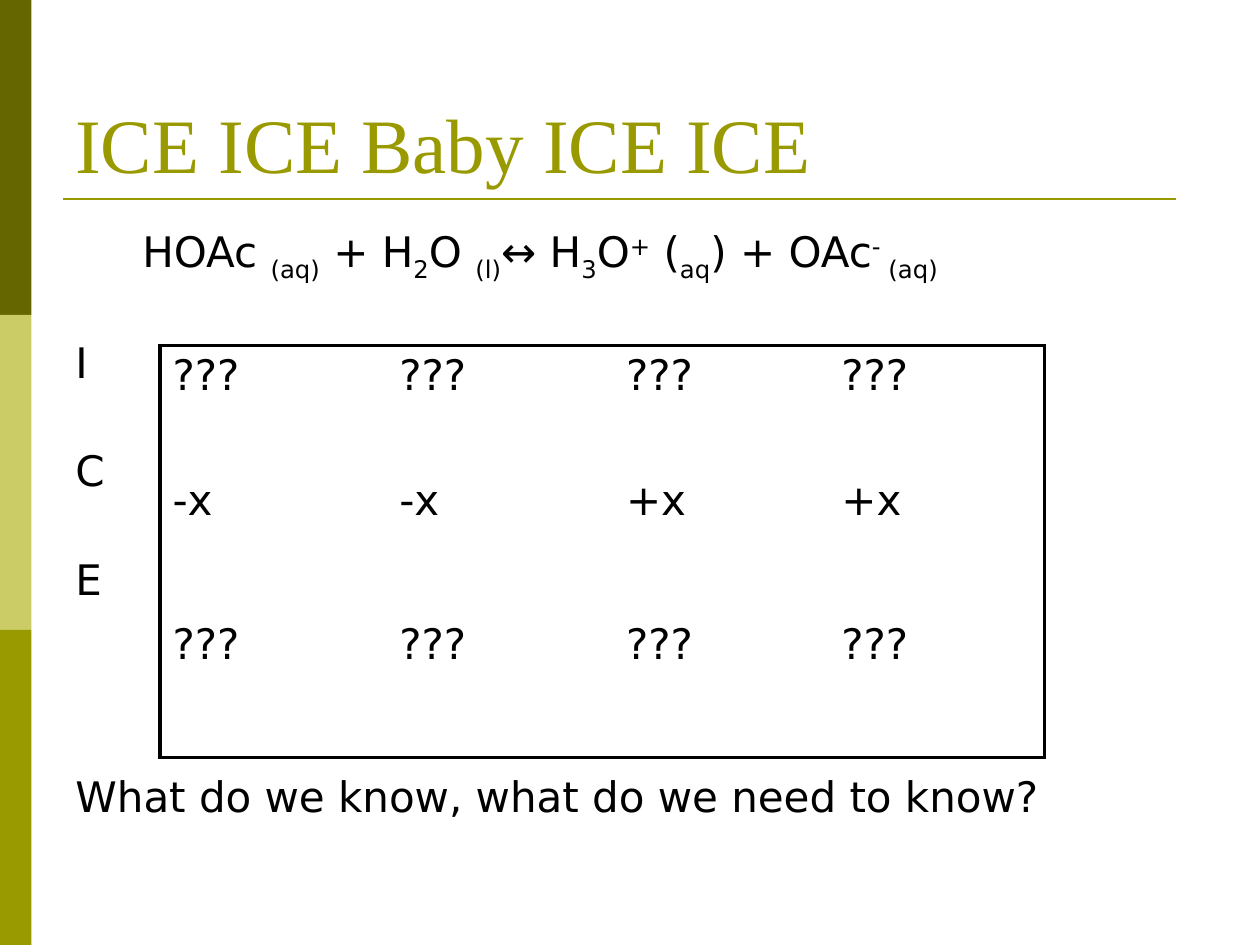
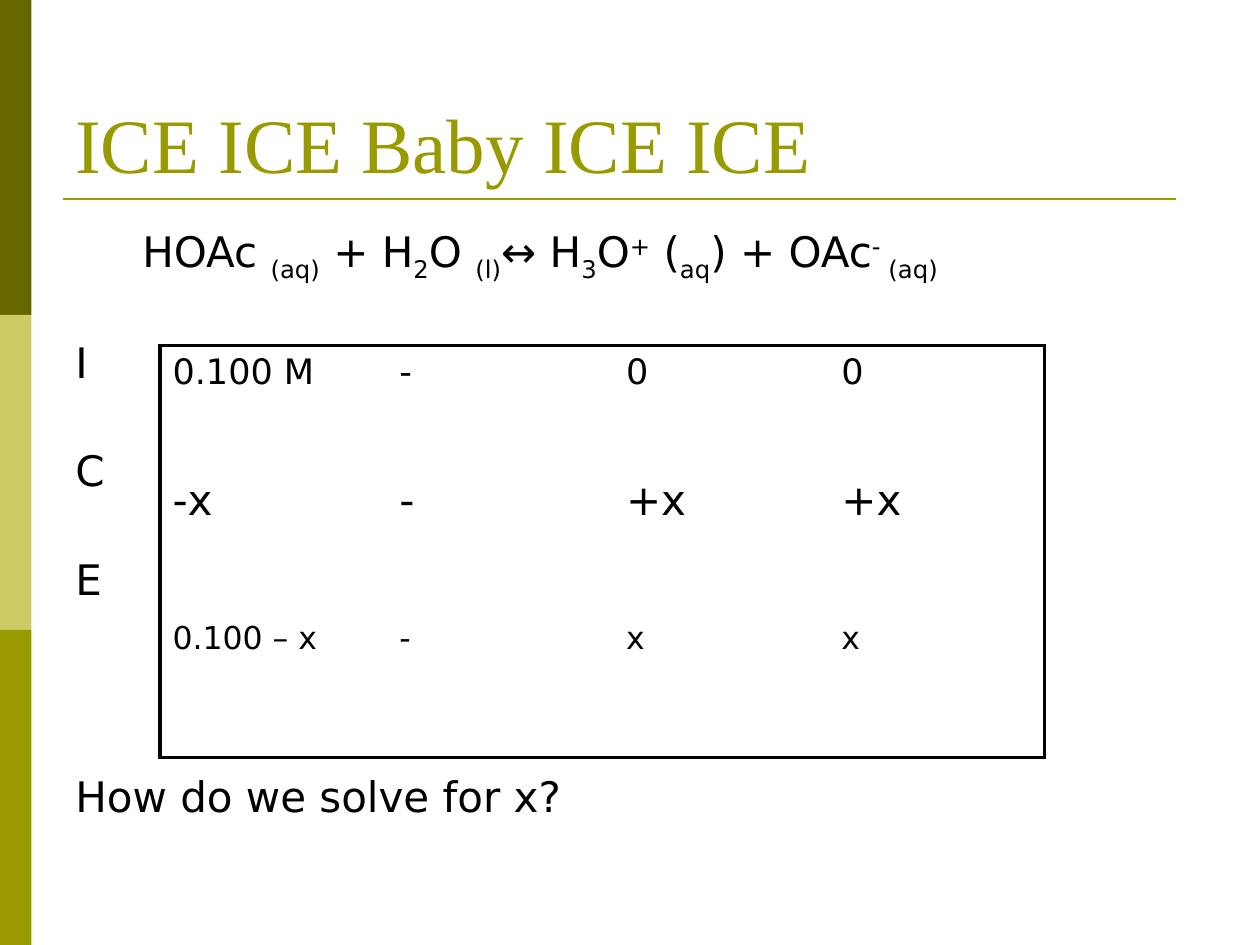
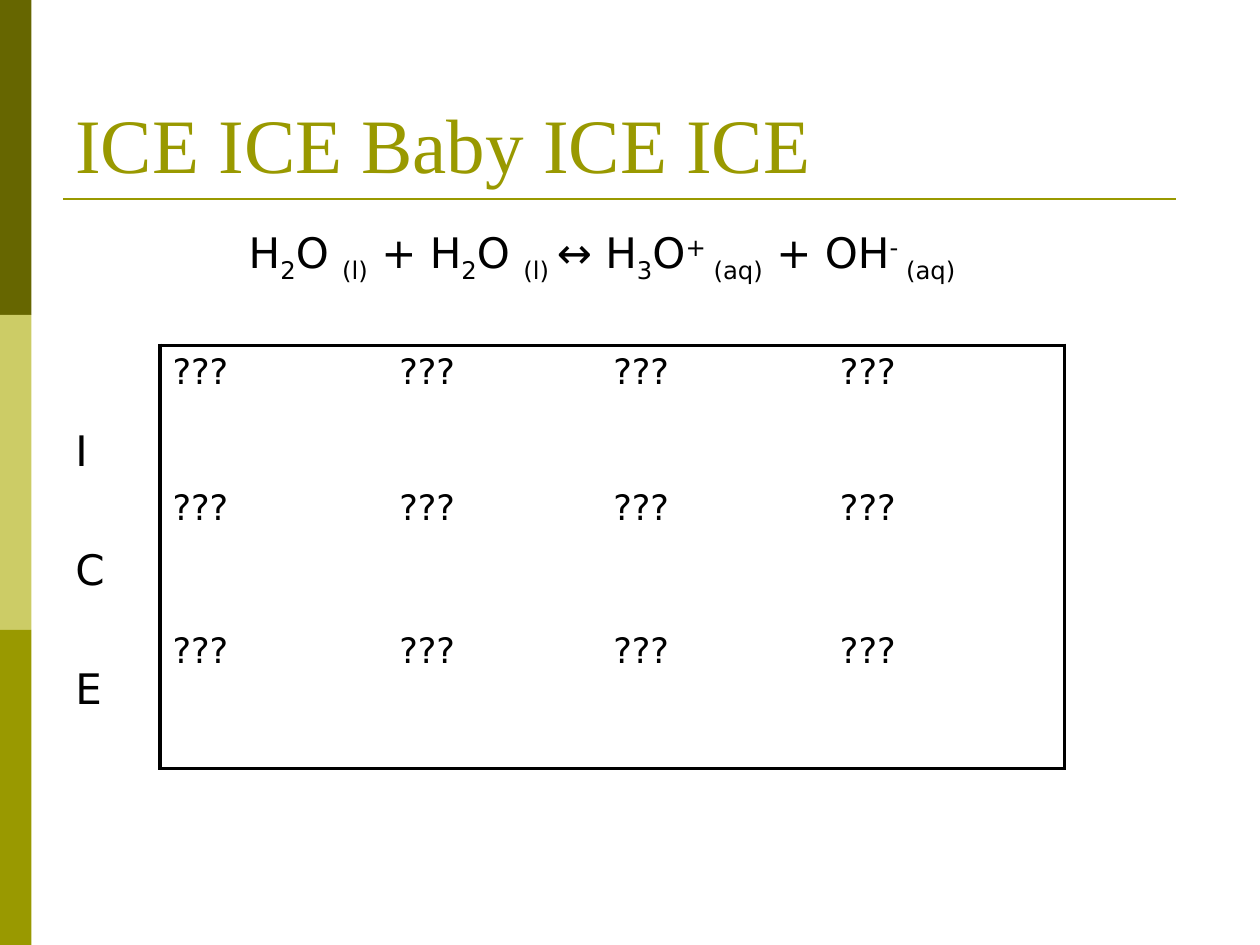
from dataclasses import dataclass

from lxml import etree
from pptx import Presentation
from pptx.dml.color import RGBColor
from pptx.enum import shapes, text
from pptx.oxml import ns
from pptx.util import Pt


# Theme
@dataclass(frozen=True)
class Theme:
    dark: str = "666600"
    light: str = "CCCC66"
    olive: str = "999900"
    ink: str = "000000"
    title_font: str = "Times New Roman"
    body_font: str = "DejaVu Sans"
    title_size: float = 44
    body_size: float = 24
    rule_width: float = 1.5
    border_width: float = 2.25


THEME = Theme()
WIDTH, HEIGHT = 720, 540
BAND_WIDTH = 18
TITLE = "ICE ICE Baby ICE ICE"
OFFSETS = {"_": "-25000", "^": "30000"}


# Content: runs starting with _ are subscripts, with ^ superscripts
@dataclass(frozen=True)
class Line:
    runs: tuple[str, ...]
    space_before: float
    indent: float = 0


@dataclass(frozen=True)
class Grid:
    columns: tuple[float, ...]
    rows: tuple[float, ...]
    values: tuple[tuple[str, ...], ...]
    sizes: tuple[float, ...]


@dataclass(frozen=True)
class IceSlide:
    lines: tuple[Line, ...]
    spacing: float
    grid: Grid


def ice_lines(equation: Line, first_gap: float, gap: float) -> tuple[Line, ...]:
    return (equation, Line(("I",), first_gap), Line(("C",), gap), Line(("E",), gap))


ACID_LINES = ice_lines(
    Line(("HOAc ", "_(aq)", " + H", "_2", "O ", "_(l)", "↔ H", "_3", "O", "^+",
          " (", "_aq", ") + OAc", "^- ", "_(aq)"), 5.6, 38.2), 36.3, 36.3)
WATER_LINES = ice_lines(
    Line(("H", "_2", "O ", "_(l)", " + H", "_2", "O ", "_(l) ", "↔ H", "_3", "O", "^+",
          "_ (aq)", " + OH", "^- ", "_(aq)"), 5.6, 99), 80, 39.2)
ACID_COLUMNS = (110.9, 18.7, 105.1, 24.5, 102.2, 20.9, 123.1)
WATER_COLUMNS = (110.9, 18.7, 105.1, 16.6, 112.3, 16.6, 135.4)
ACID_ROWS = (71.3, 82.1, 82.1)
WATER_ROWS = (77.8, 82.1, 82.1)
UNKNOWN = ("???",) * 4

SLIDES = (
    IceSlide(ACID_LINES + (Line(("What do we know, what do we need to know?",), 97.8),), 0.9,
             Grid(ACID_COLUMNS, ACID_ROWS,
                  (UNKNOWN, ("-x", "-x", "+x", "+x"), UNKNOWN), (24, 24, 24))),
    IceSlide(ACID_LINES + (Line(("How do we solve for x?",), 97.8),), 0.9,
             Grid(ACID_COLUMNS, ACID_ROWS,
                  (("0.100 M", "-", "0", "0"), ("-x", "-", "+x", "+x"),
                   ("0.100 – x", "-", "x", "x")), (20, 24, 18))),
    IceSlide(WATER_LINES, 1.0,
             Grid(WATER_COLUMNS, WATER_ROWS, (UNKNOWN,) * 3, (20, 20, 20))),
)


# Drawing
def style(font, name: str, size: float, color: str) -> None:
    font.name = name
    font.size = Pt(size)
    font.color.rgb = RGBColor.from_string(color)


def add_text_frame(slide, left: float, top: float, width: float, height: float):
    frame = slide.shapes.add_textbox(Pt(left), Pt(top), Pt(width), Pt(height)).text_frame
    frame.word_wrap = True
    return frame


def draw_frame(slide) -> None:
    """Side bands, title rule and title shared by all slides."""
    band_height = HEIGHT / 3
    for index, color in enumerate((THEME.dark, THEME.light, THEME.olive)):
        band = slide.shapes.add_shape(shapes.MSO_SHAPE.RECTANGLE, 0, Pt(index * band_height),
                                      Pt(BAND_WIDTH), Pt(band_height))
        band.shadow.inherit = False
        band.fill.solid()
        band.fill.fore_color.rgb = RGBColor.from_string(color)
        band.line.fill.background()

    rule = slide.shapes.add_connector(shapes.MSO_CONNECTOR.STRAIGHT,
                                      Pt(36), Pt(113.8), Pt(671.8), Pt(113.8))
    rule.line.color.rgb = RGBColor.from_string(THEME.olive)
    rule.line.width = Pt(THEME.rule_width)
    etree.SubElement(rule._element.spPr, ns.qn("a:effectLst"))

    title = add_text_frame(slide, 36, 21.6, 648, 90)
    title.vertical_anchor = text.MSO_ANCHOR.BOTTOM
    title.text = TITLE
    style(title.paragraphs[0].runs[0].font, THEME.title_font, THEME.title_size, THEME.olive)


def draw_lines(slide, lines: tuple[Line, ...], spacing: float) -> None:
    """Equation, row letters and question."""
    body = add_text_frame(slide, 36, 126, 622.8, 356.4)
    for index, line in enumerate(lines):
        paragraph = body.add_paragraph() if index else body.paragraphs[0]
        paragraph.line_spacing = spacing
        paragraph.space_before = Pt(line.space_before)
        paragraph._p.get_or_add_pPr().set("marL", str(Pt(line.indent)))
        for part in line.runs:
            run = paragraph.add_run()
            run.text = part.lstrip("_^")
            style(run.font, THEME.body_font, THEME.body_size, THEME.ink)
            if part[0] in OFFSETS:
                run.font._element.set("baseline", OFFSETS[part[0]])


def set_borders(cell, visible: dict[str, bool]) -> None:
    properties = cell._tc.get_or_add_tcPr()
    for position, (side, shown) in enumerate(visible.items()):
        border = etree.Element(ns.qn(f"a:{side}"), w=str(Pt(THEME.border_width)))
        if shown:
            fill = etree.SubElement(border, ns.qn("a:solidFill"))
            etree.SubElement(fill, ns.qn("a:srgbClr"), val=THEME.ink)
        else:
            etree.SubElement(border, ns.qn("a:noFill"))
        properties.insert(position, border)


def draw_grid(slide, grid: Grid) -> None:
    """ICE table: values in every other column, border around the outside."""
    row_count, column_count = len(grid.rows), len(grid.columns)
    table = slide.shapes.add_table(row_count, column_count, Pt(91.4), Pt(197.3),
                                   Pt(sum(grid.columns)), Pt(sum(grid.rows))).table
    table.first_row = table.horz_banding = False
    for column, width in zip(table.columns, grid.columns):
        column.width = Pt(width)
    for r, height in enumerate(grid.rows):
        table.rows[r].height = Pt(height)
        for c in range(column_count):
            cell = table.cell(r, c)
            cell.fill.background()
            set_borders(cell, {"lnL": c == 0, "lnR": c == column_count - 1,
                               "lnT": r == 0, "lnB": r == row_count - 1})
            if c % 2 == 0:
                cell.text_frame.text = grid.values[r][c // 2]
                style(cell.text_frame.paragraphs[0].runs[0].font,
                      THEME.body_font, grid.sizes[r], THEME.ink)


def main() -> None:
    deck = Presentation()
    deck.slide_width, deck.slide_height = Pt(WIDTH), Pt(HEIGHT)
    for content in SLIDES:
        slide = deck.slides.add_slide(deck.slide_layouts[6])
        draw_frame(slide)
        draw_lines(slide, content.lines, content.spacing)
        draw_grid(slide, content.grid)
    deck.save("out.pptx")


if __name__ == "__main__":
    main()
